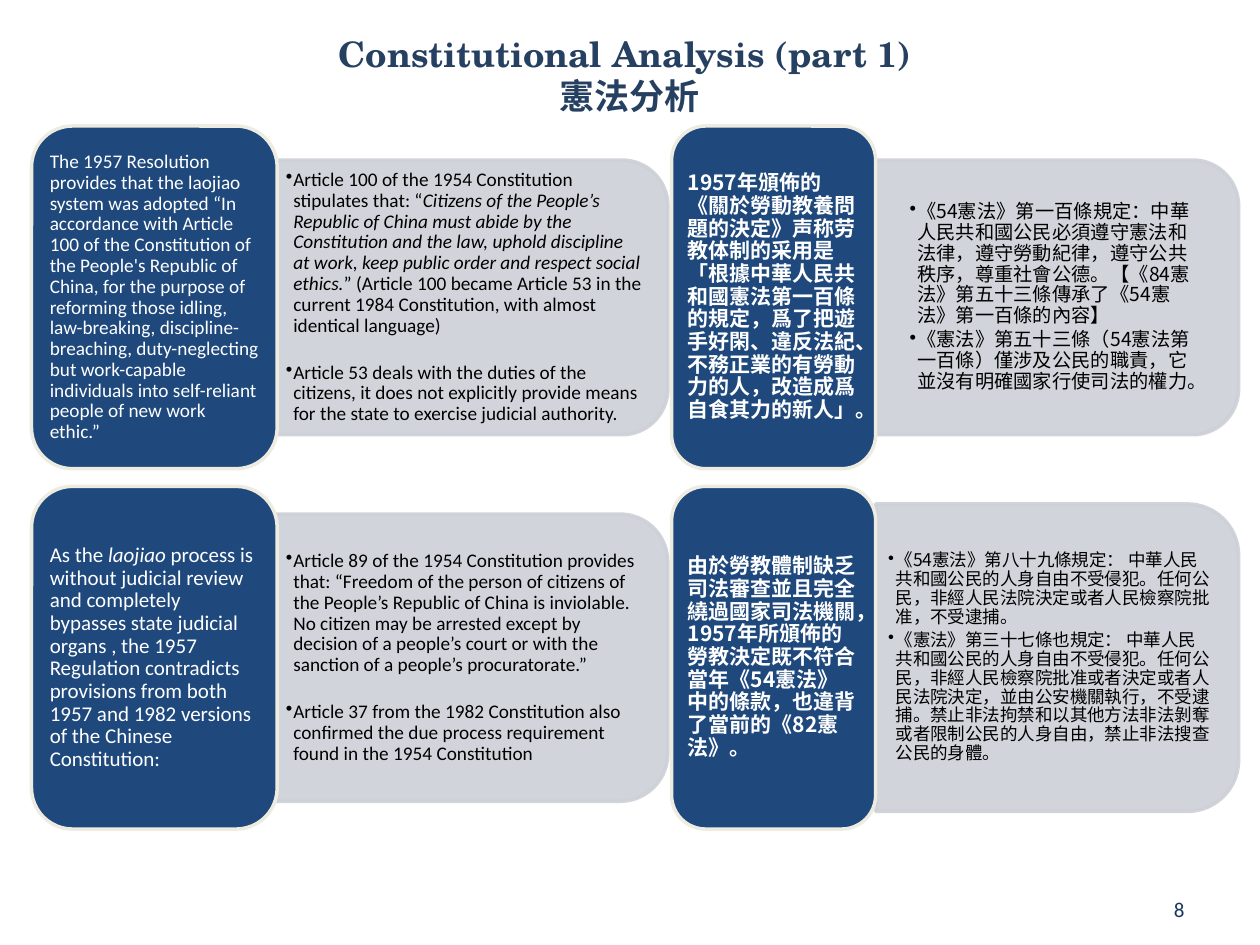
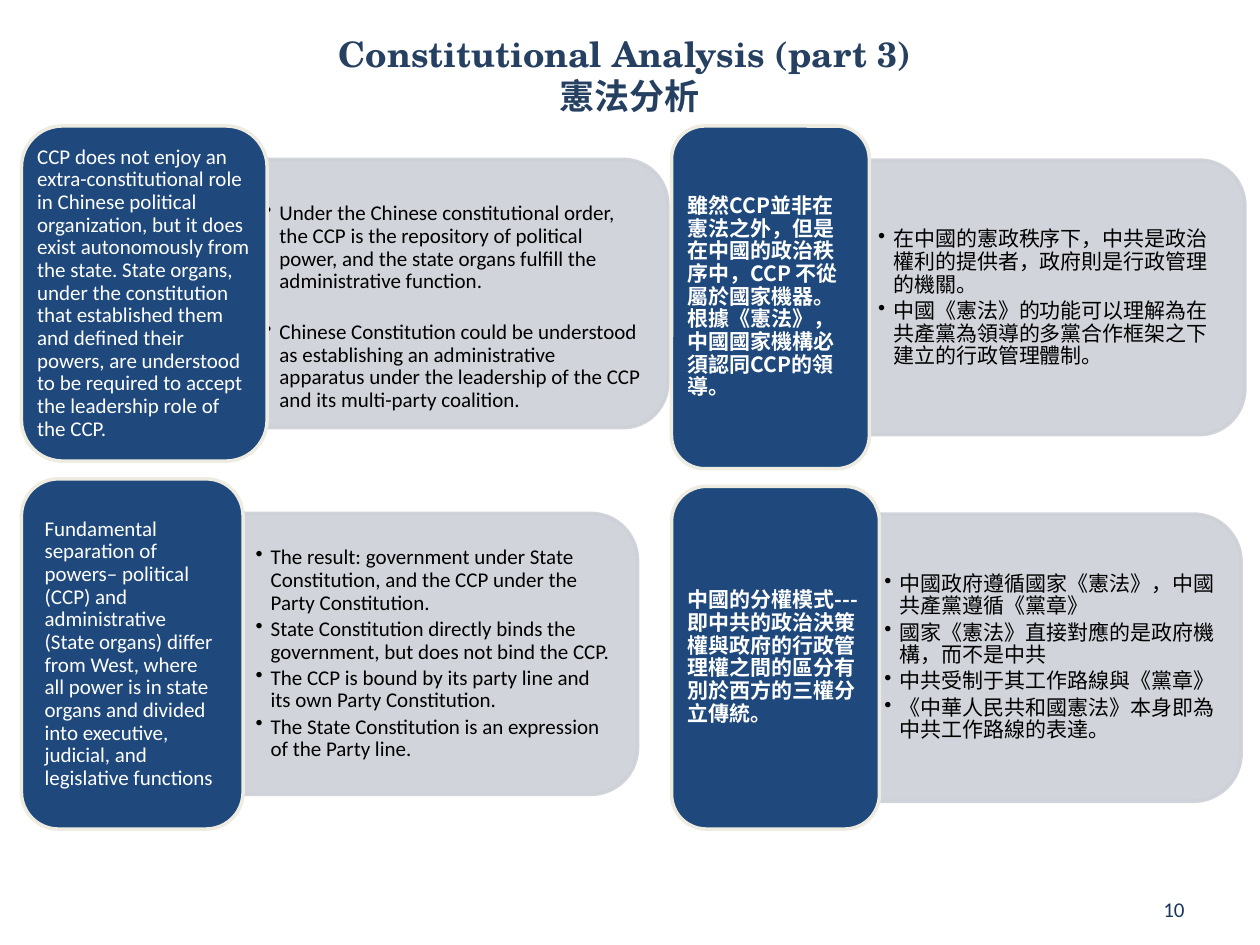
from dataclasses import dataclass

from lxml.etree import SubElement
from pptx import Presentation
from pptx.dml.color import RGBColor
from pptx.enum.shapes import MSO_SHAPE as Shape
from pptx.enum.text import MSO_ANCHOR as Anchor, PP_ALIGN as Align
from pptx.oxml.ns import qn
from pptx.util import Pt

PX = 9144  # 100 px to the inch
NAVY = RGBColor(0x1F, 0x49, 0x7D)
CREAM = RGBColor(0xEE, 0xEC, 0xE1)
GREY = RGBColor(0xCD, 0xD0, 0xD7)
TITLE_BLUE = RGBColor(0x25, 0x40, 0x61)
NUMBER_BLUE = RGBColor(0x17, 0x37, 0x5E)
WHITE = RGBColor(0xFF, 0xFF, 0xFF)
BLACK = RGBColor(0, 0, 0)
SANS, SERIF, CJK = "Calibri", "TeX Gyre Schola", "Noto Sans CJK TC"
CORNER_INSET = 0.0488  # text inset of a rounded corner, as a share of the side


@dataclass
class Block:
    card: tuple  # left, top, width, height
    panel: tuple  # left, width, height; centred on the card vertically
    claim: str
    points: list
    claim_size: int = 12
    point_size: int = 12
    hang: int = 12
    gap: int = 2
    card_pad: int = 5
    panel_pad: int = 10
    drop: int = 0


SLIDES = [
    ("Constitutional Analysis (part 1) ", "8", [
        Block((25, 100, 195, 272), (217, 313, 218),
              "The 1957 Resolution provides that the laojiao system was adopted “In accordance "
              "with Article 100 of the Constitution of the People's Republic of China, for the "
              "purpose of reforming those idling, law-breaking, discipline-breaching, "
              "duty-neglecting but work-capable individuals into self-reliant people of new "
              "work ethic.”",
              ["Article 100 of the 1954 Constitution stipulates that: “*Citizens of the People’s "
               "Republic of China must abide by the Constitution and the law, uphold discipline "
               "at work, keep public order and respect social ethics.*” (Article 100 became "
               "Article 53 in the current 1984 Constitution, with almost identical language)",
               "Article 53 deals with the duties of the citizens, it does not explicitly provide "
               "means for the state to exercise judicial authority."],
              claim_size=11, point_size=11, hang=6, gap=15),
        Block((25, 386, 195, 272), (217, 313, 228),
              "As the *laojiao *process is without judicial review and completely bypasses state "
              "judicial organs , the 1957 Regulation contradicts provisions from both 1957 and "
              "1982 versions of the Chinese Constitution:",
              ["Article 89 of the 1954 Constitution provides that: “Freedom of the person of "
               "citizens of the People’s Republic of China is inviolable. No citizen may be "
               "arrested except by decision of a people’s court or with the sanction of a "
               "people’s procuratorate.”",
               "Article 37 from the 1982 Constitution also confirmed the due process requirement "
               "found in the 1954 Constitution"],
              point_size=11, hang=6, gap=15),
        Block((533, 100, 162, 272), (695, 288, 218),
              "1957年頒佈的《關於勞動教養問題的決定》声称劳教体制的采用是「根據中華人民共和國憲法"
              "第一百條的規定，爲了把遊手好閑、違反法紀、不務正業的有勞動力的人，改造成爲自食其力的新人」。",
              ["《54憲法》第一百條規定：中華人民共和國公民必須遵守憲法和法律，遵守勞動紀律，遵守公共秩序，"
               "尊重社會公德。【《84憲法》第五十三條傳承了《54憲法》第一百條的內容】",
               "《憲法》第五十三條（54憲法第一百條）僅涉及公民的職責，它並沒有明確國家行使司法的權力。"],
              point_size=11, hang=6, panel_pad=27),
        Block((533, 386, 162, 272), (695, 288, 244),
              "由於勞教體制缺乏司法審查並且完全繞過國家司法機關，1957年所頒佈的勞教決定既不符合當年"
              "《54憲法》中的條款，也違背了當前的《82憲法》。",
              ["《54憲法》第八十九條規定： 中華人民共和國公民的人身自由不受侵犯。任何公民，非經人民法院決定"
               "或者人民檢察院批准，不受逮捕。",
               "《憲法》第三十七條也規定： 中華人民共和國公民的人身自由不受侵犯。任何公民，非經人民檢察院批准"
               "或者決定或者人民法院決定，並由公安機關執行，不受逮捕。禁止非法拘禁和以其他方法非法剝奪或者限制"
               "公民的人身自由，禁止非法搜查公民的身體。"],
              point_size=10, hang=6),
    ]),
    ("Constitutional Analysis (part 3) ", "10", [
        Block((17, 100, 195, 266), (200, 330, 213),
              "CCP does not enjoy an extra-constitutional role in Chinese political organization, "
              "but it does exist autonomously from the state. State organs, under the "
              "constitution that established them and defined their powers, are understood to be "
              "required to accept the leadership role of the CCP.",
              ["Under the Chinese constitutional order, the CCP is the repository of political "
               "power, and the state organs fulfill the administrative function.",
               "Chinese Constitution could be understood as establishing an administrative "
               "apparatus under the leadership of the CCP and its multi-party coalition."],
              gap=16, card_pad=3, drop=11),
        Block((17, 380, 176, 278), (193, 313, 223),
              "Fundamental separation of powers– political (CCP) and administrative (State "
              "organs) differ from West, where all power is in state organs and divided into "
              "executive, judicial, and legislative functions",
              ["The result: government under State Constitution, and the CCP under the Party "
               "Constitution.",
               "State Constitution directly binds the government, but does not bind the CCP.",
               "The CCP is bound by its party line and its own Party Constitution.",
               "The State Constitution is an expression of the Party line."],
              card_pad=10),
        Block((533, 100, 157, 272), (687, 301, 218),
              "雖然CCP並非在憲法之外，但是在中國的政治秩序中，CCP 不從屬於國家機器。根據《憲法》，"
              "中國國家機構必須認同CCP的領導。",
              ["在中國的憲政秩序下，中共是政治權利的提供者，政府則是行政管理的機關。",
               "中國《憲法》的功能可以理解為在共產黨為領導的多黨合作框架之下建立的行政管理體制。"],
              drop=1),
        Block((533, 386, 165, 272), (692, 293, 228),
              "中國的分權模式---即中共的政治決策權與政府的行政管理權之間的區分有別於西方的三權分立傳統。",
              ["中國政府遵循國家《憲法》，中國共產黨遵循《黨章》",
               "國家《憲法》直接對應的是政府機構，而不是中共",
               "中共受制于其工作路線與《黨章》",
               "《中華人民共和國憲法》本身即為中共工作路線的表達。"]),
    ]),
]


def write(shape, paragraphs, size, color, font=SANS, bold=False, align=Align.LEFT,
          pad=10, spacing=1.0, gap=0, hang=0):
    """Fill a shape with text; *stars* mark italics and hang turns on bullets."""
    frame = shape.text_frame
    frame.word_wrap = True
    frame.vertical_anchor = Anchor.MIDDLE
    frame.margin_left = frame.margin_right = pad * PX
    frame.margin_top = frame.margin_bottom = 3 * PX
    for i, text in enumerate(paragraphs):
        par = frame.add_paragraph() if i else frame.paragraphs[0]
        if hang:
            props = par._p.get_or_add_pPr()
            props.set("marL", str(hang * PX))
            props.set("indent", str(-hang * PX))
            SubElement(props, qn("a:buChar")).set("char", "•")
        par.alignment = align
        par.line_spacing = spacing
        if i:
            par.space_before = Pt(gap)
        for j, part in enumerate(text.split("*")):
            run = par.add_run()
            run.text = part
            run.font.size = Pt(size)
            run.font.name = font
            run.font.bold = bold
            run.font.italic = j % 2 == 1
            run.font.color.rgb = color
            SubElement(run._r.get_or_add_rPr(), qn("a:ea")).set("typeface", CJK)


def add_rounded(slide, kind, box, fill, line, opacity=100):
    shape = slide.shapes.add_shape(kind, *(round(v * PX) for v in box))
    shape.shadow.inherit = False
    shape.fill.solid()
    shape.fill.fore_color.rgb = fill
    shape.line.color.rgb = line
    shape.line.width = Pt(2)
    if opacity < 100:
        for color in shape._element.spPr.iter(qn("a:srgbClr")):
            SubElement(color, qn("a:alpha")).set("val", str(opacity * 1000))
    return shape


prs = Presentation()
prs.slide_width, prs.slide_height = 1000 * PX, 750 * PX

for heading, number, blocks in SLIDES:
    slide = prs.slides.add_slide(prs.slide_layouts[6])
    title = slide.shapes.add_textbox(50 * PX, 18 * PX, 900 * PX, 82 * PX)
    write(title, [heading, "憲法分析"], 20, TITLE_BLUE, font=SERIF, bold=True, align=Align.CENTER)

    for block in blocks:
        left, top, width, height = block.card
        panel_left, panel_width, panel_height = block.panel
        middle = top + height / 2
        chinese = left > 500
        font = CJK if chinese else SANS

        # Turned a quarter, so its rounded top faces right
        panel = add_rounded(slide, Shape.ROUND_2_SAME_RECTANGLE,
                            (panel_left + (panel_width - panel_height) / 2,
                             middle - panel_width / 2, panel_height, panel_width),
                            GREY, GREY, opacity=90)
        panel.rotation = 90

        inset = CORNER_INSET * panel_height
        text_box = (panel_left, middle - panel_height / 2 + inset + block.drop,
                    panel_width - inset, panel_height - 2 * inset)
        details = slide.shapes.add_textbox(*(round(v * PX) for v in text_box))
        write(details, block.points, block.point_size, BLACK, font=font, spacing=0.9,
              pad=block.panel_pad, gap=block.gap, hang=block.hang)

        card = add_rounded(slide, Shape.ROUNDED_RECTANGLE, block.card, NAVY, CREAM)
        write(card, [block.claim], block.claim_size, WHITE, font=font, bold=chinese,
              spacing=0.9, pad=block.card_pad)

    page = slide.shapes.add_textbox(842 * PX, 708 * PX, 108 * PX, 27 * PX)
    write(page, [number], 12, NUMBER_BLUE, align=Align.RIGHT)

prs.save("out.pptx")
